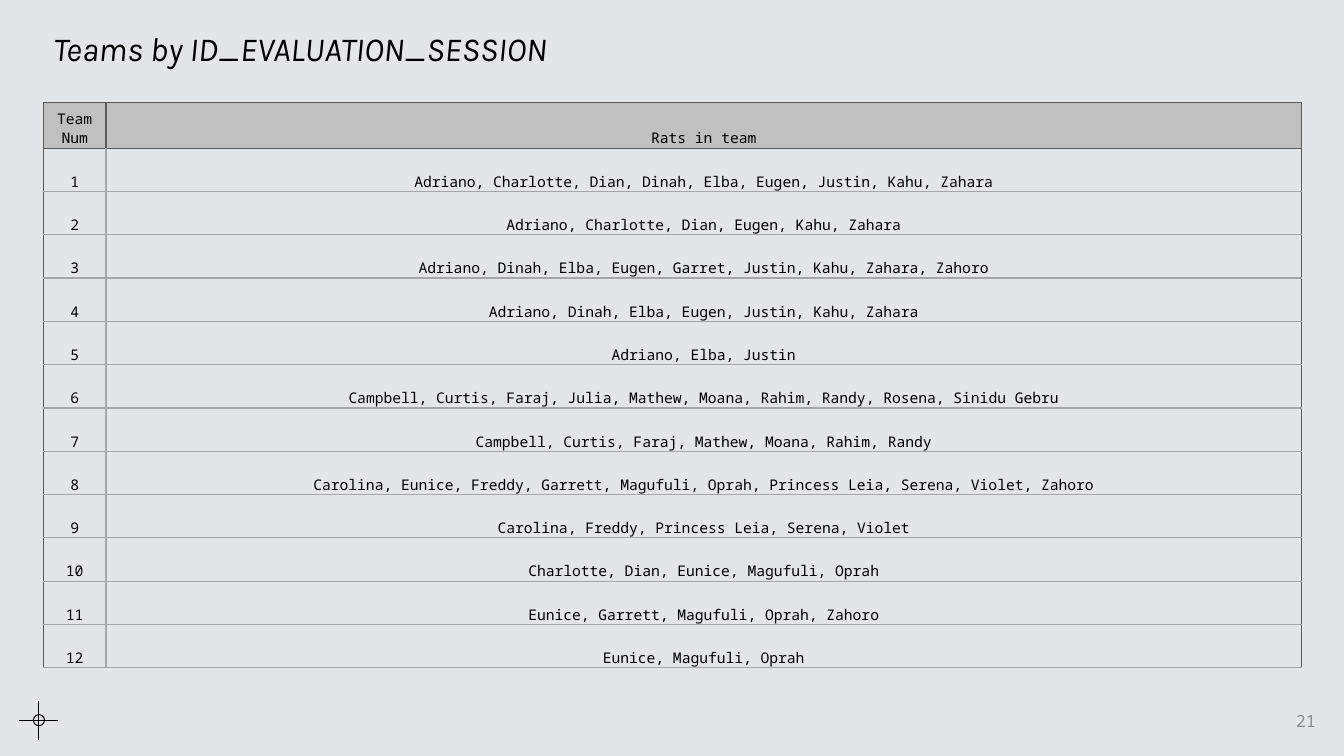
from dataclasses import dataclass
from typing import Any, NamedTuple

from lxml.etree import SubElement as sub_el
from pptx import Presentation
from pptx.dml.color import RGBColor as Rgb
from pptx.enum.shapes import MSO_CONNECTOR as Link, MSO_SHAPE as Form
from pptx.enum.text import MSO_ANCHOR as Anchor, PP_ALIGN as Align
from pptx.oxml import parse_xml
from pptx.oxml.ns import nsdecls, qn
from pptx.util import Inches, Pt

WIDE, HIGH = Inches(13.33), Inches(7.5)


@dataclass(frozen=True)
class Theme:
    back: str = "E2E6E8"
    ink: str = "000000"
    pale: str = "8C8C8C"
    head: str = "C0C0C0"
    body: str = "E2E6E9"
    edge: str = "595959"
    rule: str = "A6A6A6"
    mono: str = "Noto Sans Mono"
    sans: str = "Karla"
    title: float = 24
    page: float = 12
    cell: float = 10.5
    thin: float = 0.75
    grid: float = 1


class Box(NamedTuple):
    """Left, top, width and height in percent of the slide."""
    left: float
    top: float
    width: float
    height: float


class Label(NamedTuple):
    text: str
    box: Box
    font: dict[str, Any]
    tint: str
    para: dict[str, Any]
    frame: dict[str, Any]


class Line(NamedTuple):
    """Both ends in percent of the slide."""
    x1: float
    y1: float
    x2: float
    y2: float


LOOK = Theme()
LABELS = [
    Label("21", Box(89.5, 92.67, 9.15, 5.33),
          {"name": LOOK.mono, "size": Pt(LOOK.page)}, LOOK.pale,
          {"alignment": Align.RIGHT}, {"vertical_anchor": Anchor.MIDDLE}),
    Label("Teams by ID_EVALUATION_SESSION", Box(3.23, 2, 46.81, 8.4),
          {"name": LOOK.sans, "size": Pt(LOOK.title), "italic": True}, LOOK.ink,
          {"line_spacing": 1.2},
          {"vertical_anchor": Anchor.BOTTOM} | dict.fromkeys(
              ("margin_left", "margin_top", "margin_right", "margin_bottom"),
              Inches(0.1))),
]
CROSS = [Line(1.43, 95.27, 4.35, 95.27), Line(2.89, 97.87, 2.89, 92.67)]
RING = Box(2.48, 94.53, 0.83, 1.47)

COLS = [4.65, 88.97]
HEAD_ROW, TEAM_ROW = 6, 5.73
HEADS = ("Team Num", "Rats in team")
TEAMS = [
    "Adriano, Charlotte, Dian, Dinah, Elba, Eugen, Justin, Kahu, Zahara",
    "Adriano, Charlotte, Dian, Eugen, Kahu, Zahara",
    "Adriano, Dinah, Elba, Eugen, Garret, Justin, Kahu, Zahara, Zahoro",
    "Adriano, Dinah, Elba, Eugen, Justin, Kahu, Zahara",
    "Adriano, Elba, Justin",
    "Campbell, Curtis, Faraj, Julia, Mathew, Moana, Rahim, Randy, Rosena, Sinidu Gebru",
    "Campbell, Curtis, Faraj, Mathew, Moana, Rahim, Randy",
    "Carolina, Eunice, Freddy, Garrett, Magufuli, Oprah, Princess Leia, Serena, Violet, Zahoro",
    "Carolina, Freddy, Princess Leia, Serena, Violet",
    "Charlotte, Dian, Eunice, Magufuli, Oprah",
    "Eunice, Garrett, Magufuli, Oprah, Zahoro",
    "Eunice, Magufuli, Oprah",
]


def across(share: float) -> int:
    return round(WIDE * share / 100)


def down(share: float) -> int:
    return round(HIGH * share / 100)


def place(box: Box) -> tuple[int, int, int, int]:
    return across(box.left), down(box.top), across(box.width), down(box.height)


def apply(item: Any, values: dict[str, Any]) -> None:
    for name, value in values.items():
        setattr(item, name, value)


def write(frame: Any, text: str, font: dict[str, Any], tint: str,
          para: dict[str, Any]) -> None:
    first = frame.paragraphs[0]
    apply(first, para)
    run = first.add_run()
    run.text = text
    apply(run.font, font)
    run.font.color.rgb = Rgb.from_string(tint)


def add_label(slide: Any, label: Label) -> None:
    frame = slide.shapes.add_textbox(*place(label.box)).text_frame
    apply(frame, {"word_wrap": True} | label.frame)
    write(frame, label.text, label.font, label.tint, label.para)


def ink(line: Any) -> None:
    line.color.rgb = Rgb.from_string(LOOK.ink)
    line.width = Pt(LOOK.thin)


def add_mark(slide: Any) -> None:
    """Add the crosshair in the lower left corner."""
    group = slide.shapes.add_group_shape().shapes
    for arm in CROSS:
        link = group.add_connector(Link.STRAIGHT, across(arm.x1), down(arm.y1),
                                   across(arm.x2), down(arm.y2))
        ink(link.line)
        sub_el(link._element.spPr, qn("a:effectLst"))
    ring = group.add_shape(Form.OVAL, *place(RING))
    ring.shadow.inherit = False
    ring.fill.background()
    ink(ring.line)


def set_edge(cell: Any, tints: dict[str, str]) -> None:
    """Draw the cell borders, given by side in the order L, R, T, B."""
    props = cell._tc.get_or_add_tcPr()
    for spot, (side, tint) in enumerate(tints.items()):
        props.insert(spot, parse_xml(
            f'<a:ln{side} {nsdecls("a")} w="{Pt(LOOK.grid)}"><a:solidFill>'
            f'<a:srgbClr val="{tint}"/></a:solidFill></a:ln{side}>'))


def fill_cell(cell: Any, text: str, row: int, col: int) -> None:
    head = row == 0
    pad = 0 if head else Inches(0.01)
    apply(cell, {"margin_left": pad, "margin_right": pad, "margin_top": pad,
                 "margin_bottom": 0, "vertical_anchor": Anchor.BOTTOM})
    cell.fill.solid()
    cell.fill.fore_color.rgb = Rgb.from_string(LOOK.head if head else LOOK.body)
    dark = {"L": head or col == 0, "R": head or col == len(COLS) - 1,
            "T": row <= 1, "B": head}
    set_edge(cell, {side: LOOK.edge if on else LOOK.rule
                    for side, on in dark.items()})
    write(cell.text_frame, text,
          {"name": LOOK.mono, "size": Pt(LOOK.cell), "bold": False}, LOOK.ink,
          {"alignment": Align.CENTER})


def add_teams(slide: Any) -> None:
    rows = [HEADS, *((str(num), team) for num, team in enumerate(TEAMS, 1))]
    box = Box(3.23, 13.6, sum(COLS), HEAD_ROW + TEAM_ROW * len(TEAMS))
    table = slide.shapes.add_table(len(rows), len(COLS), *place(box)).table
    apply(table, {"first_row": False, "horz_banding": False})
    for col, width in enumerate(COLS):
        table.columns[col].width = across(width)
    for row, texts in enumerate(rows):
        table.rows[row].height = down(TEAM_ROW if row else HEAD_ROW)
        for col, text in enumerate(texts):
            fill_cell(table.cell(row, col), text, row, col)


def main() -> None:
    deck = Presentation()
    apply(deck, {"slide_width": WIDE, "slide_height": HIGH})
    slide = deck.slides.add_slide(deck.slide_layouts[6])
    slide.background.fill.solid()
    slide.background.fill.fore_color.rgb = Rgb.from_string(LOOK.back)
    add_mark(slide)
    add_teams(slide)
    for label in LABELS:
        add_label(slide, label)
    deck.save("out.pptx")


if __name__ == "__main__":
    main()
